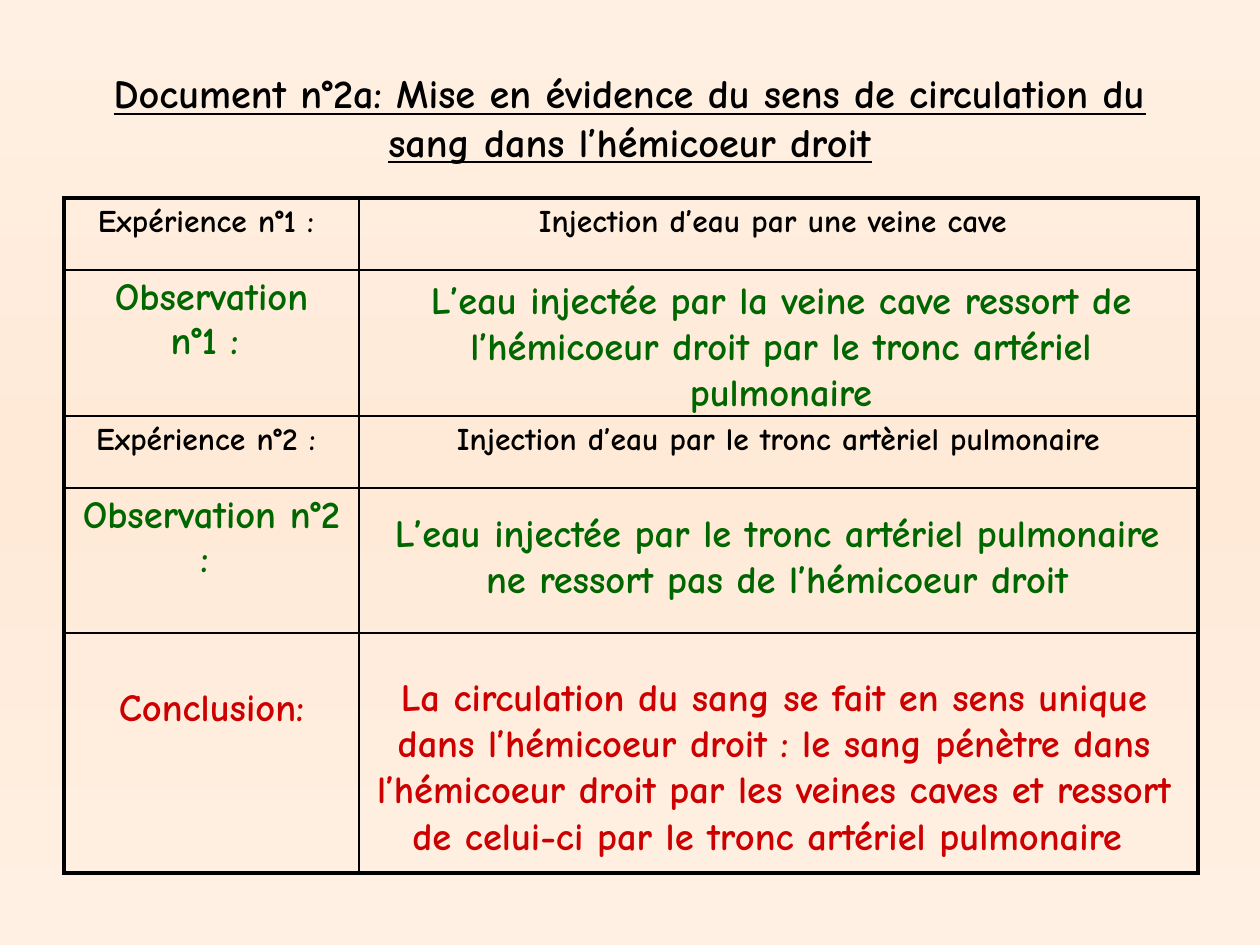
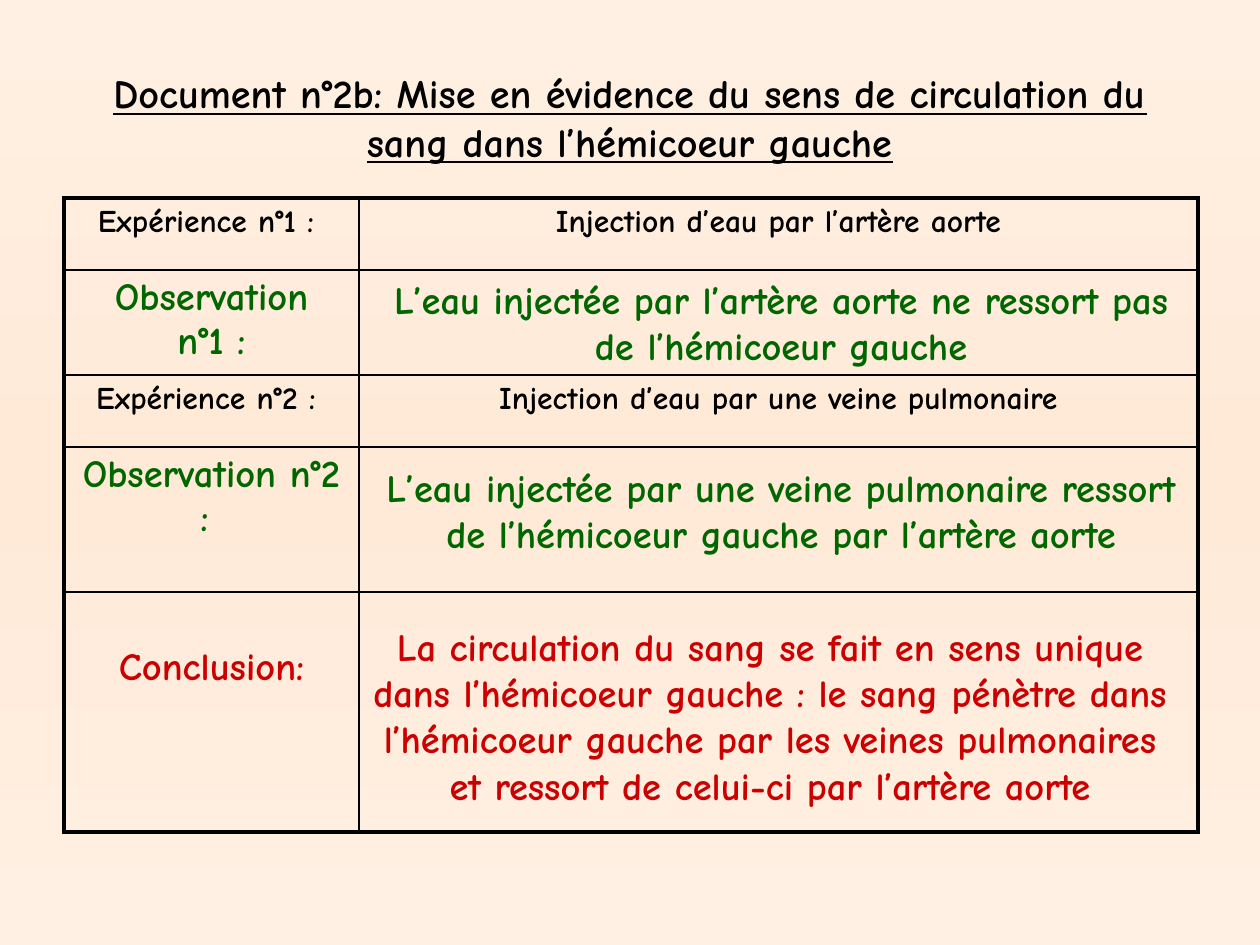
from copy import deepcopy
from dataclasses import dataclass

from lxml.etree import SubElement
from pptx import Presentation
from pptx.dml.color import RGBColor
from pptx.enum.text import MSO_ANCHOR, MSO_AUTO_SIZE, PP_ALIGN
from pptx.oxml.ns import qn
from pptx.util import Pt

PX = 914400 // 126
FONT = "Comic Neue"
BLACK, GREEN, RED = "000000", "006600", "CC0000"
PAPER, PAPER_MIDDLE = "FFF0E3", "FFEAD7"
THICK, THIN = 2.25, 1
MARGIN_X, MARGIN_Y = 13, 6
TABLE_LEFT, TABLE_TOP = 64, 125
COLUMN_WIDTHS = (295, 839)
PLAIN_TABLE_STYLE = "{2D5ABB26-0587-4C30-8999-92F81FD0307C}"


@dataclass(frozen=True)
class Row:
    height: int
    label: str = ""
    text: str = ""
    size: int = 22
    color: str = BLACK
    margin_top: int = MARGIN_Y


@dataclass(frozen=True)
class Finding:
    """Answer written over a table row."""
    left: int
    top: int
    width: int
    height: int
    text: str
    color: str = GREEN


@dataclass(frozen=True)
class Document:
    title: str
    rows: tuple[Row, ...]
    findings: tuple[Finding, ...]


def rgb(color: str) -> RGBColor:
    return RGBColor.from_string(color)


def write(frame, text: str, *, size: int, color: str = BLACK,
          underline: bool = False) -> None:
    frame.word_wrap = True
    para = frame.paragraphs[0]
    para.alignment = PP_ALIGN.CENTER
    span = para.add_run()
    span.text = text
    font = span.font
    font.name, font.size, font.bold = FONT, Pt(size), True
    font.color.rgb = rgb(color)
    if underline:
        font.underline = True


def set_margins(target, top: int = MARGIN_Y) -> None:
    target.margin_left = target.margin_right = MARGIN_X * PX
    target.margin_top, target.margin_bottom = top * PX, MARGIN_Y * PX


def set_borders(cell, **widths: float) -> None:
    """Draw black borders; sides are given in the order L, R, T, B."""
    properties = cell._tc.get_or_add_tcPr()
    for side, width in widths.items():
        line = SubElement(properties, qn(f"a:ln{side}"), w=str(Pt(width)))
        fill = SubElement(line, qn("a:solidFill"))
        SubElement(fill, qn("a:srgbClr"), val=BLACK)


def paint_background(master) -> None:
    fill = master.background.fill
    fill.gradient()
    fill.gradient_angle = 90
    for stop in fill.gradient_stops:
        stop.color.rgb = rgb(PAPER)
    stop_list = master.element.xpath("./p:cSld/p:bg//a:gsLst")[0]
    stop_list.insert(1, deepcopy(stop_list[0]))
    middle = fill.gradient_stops[1]
    middle.position = 0.5
    middle.color.rgb = rgb(PAPER_MIDDLE)


def add_title(page, text: str) -> None:
    title = page.shapes.title
    title.left, title.top = 63 * PX, 38 * PX
    title.width, title.height = 1134 * PX, 158 * PX
    frame = title.text_frame
    frame.auto_size = MSO_AUTO_SIZE.NONE
    frame.vertical_anchor = MSO_ANCHOR.MIDDLE
    set_margins(frame)
    write(frame, text, size=23, underline=True)


def add_experiment_table(page, rows: tuple[Row, ...]) -> None:
    """Draw the rows under an empty, borderless merged row."""
    height = sum(row.height for row in rows)
    frame = page.shapes.add_table(
        len(rows), len(COLUMN_WIDTHS), TABLE_LEFT * PX, TABLE_TOP * PX,
        sum(COLUMN_WIDTHS) * PX, height * PX)
    table = frame.table
    table.first_row = table.horz_banding = False
    table._tbl.tblPr.find(qn("a:tableStyleId")).text = PLAIN_TABLE_STYLE
    for column, width in zip(table.columns, COLUMN_WIDTHS):
        column.width = width * PX
    table.cell(0, 0).merge(table.cell(0, 1))

    last = len(rows) - 1
    for index, row in enumerate(rows):
        table.rows[index].height = row.height * PX
        for column, text in enumerate((row.label, row.text)):
            cell = table.cell(index, column)
            if index == 0:
                set_borders(cell, B=THICK)
            else:
                set_borders(cell,
                            L=THIN if column else THICK,
                            R=THICK if column else THIN,
                            T=THICK if index == 1 else THIN,
                            B=THICK if index == last else THIN)
            cell.fill.background()
            set_margins(cell, row.margin_top)
            if text:
                write(cell.text_frame, text, size=row.size, color=row.color)


def add_finding(page, finding: Finding) -> None:
    box = page.shapes.add_textbox(finding.left * PX, finding.top * PX,
                                  finding.width * PX, finding.height * PX)
    set_margins(box.text_frame)
    write(box.text_frame, finding.text, size=22, color=finding.color)


def experiment_rows(first: str, second: str, first_height: int,
                    first_label: str) -> tuple[Row, ...]:
    return (
        Row(73),
        Row(72, "Expérience n°1 : ", first, size=18),
        Row(first_height, first_label, color=GREEN),
        Row(72, "Expérience n°2 : ", second, size=18),
        Row(145, "Observation n°2 : ", color=GREEN),
        Row(240, "Conclusion:", color=RED, margin_top=54),
    )


DOCUMENTS = (
    Document(
        "Document n°2a: Mise en évidence du sens de circulation du sang "
        "dans l’hémicoeur droit",
        experiment_rows("Injection d’eau par une veine cave ",
                        "Injection d’eau par le tronc artèriel pulmonaire",
                        146, "Observation n°1 : "),
        (
            Finding(362, 667, 824, 243,
                    "La circulation du sang se fait en sens unique dans "
                    "l’hémicoeur droit : le sang pénètre dans l’hémicoeur "
                    "droit par les veines caves et ressort de celui-ci par "
                    "le tronc artériel pulmonaire ", RED),
            Finding(362, 270, 838, 151,
                    "L’eau injectée par la veine cave ressort de l’hémicoeur "
                    "droit par le tronc artériel pulmonaire"),
            Finding(358, 503, 838, 151,
                    "L’eau injectée par le tronc artériel pulmonaire ne "
                    "ressort pas de l’hémicoeur droit"),
        ),
    ),
    Document(
        "Document n°2b: Mise en évidence du sens de circulation du sang "
        "dans l’hémicoeur gauche",
        experiment_rows("Injection d’eau par l’artère aorte",
                        "Injection d’eau par une veine pulmonaire",
                        105, "Observation n°1 :"),
        (
            Finding(358, 617, 824, 243,
                    "La circulation du sang se fait en sens unique dans "
                    "l’hémicoeur gauche : le sang pénètre dans l’hémicoeur "
                    "gauche par les veines pulmonaires et ressort de "
                    "celui-ci par l’artère aorte", RED),
            Finding(362, 270, 838, 105,
                    "L’eau injectée par l’artère aorte ne ressort pas de "
                    "l’hémicoeur gauche"),
            Finding(362, 458, 838, 151,
                    "L’eau injectée par une veine pulmonaire ressort de "
                    "l’hémicoeur gauche par l’artère aorte"),
        ),
    ),
)


def main() -> None:
    deck = Presentation()
    deck.slide_width, deck.slide_height = 1260 * PX, 945 * PX
    paint_background(deck.slide_master)
    title_only = deck.slide_layouts.get_by_name("Title Only")
    for document in DOCUMENTS:
        page = deck.slides.add_slide(title_only)
        add_title(page, document.title)
        add_experiment_table(page, document.rows)
        for finding in document.findings:
            add_finding(page, finding)
    deck.save("out.pptx")


if __name__ == "__main__":
    main()
